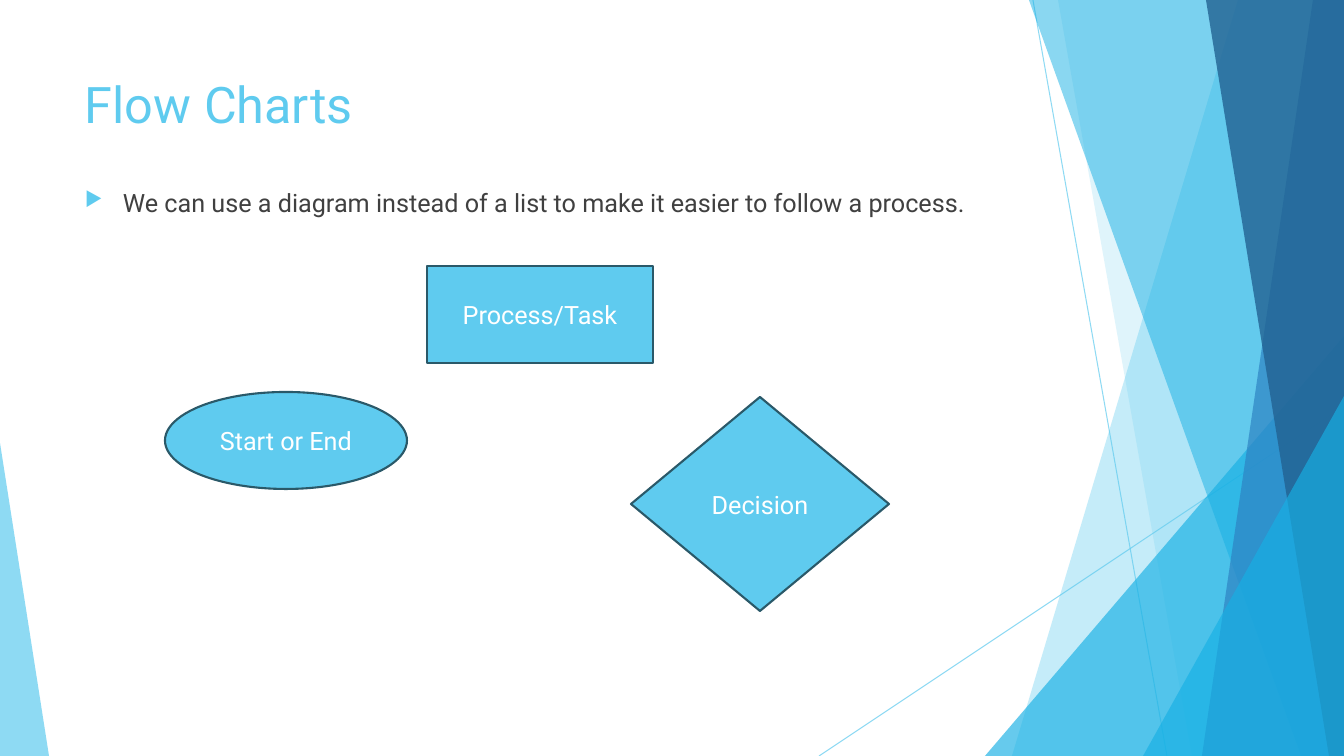
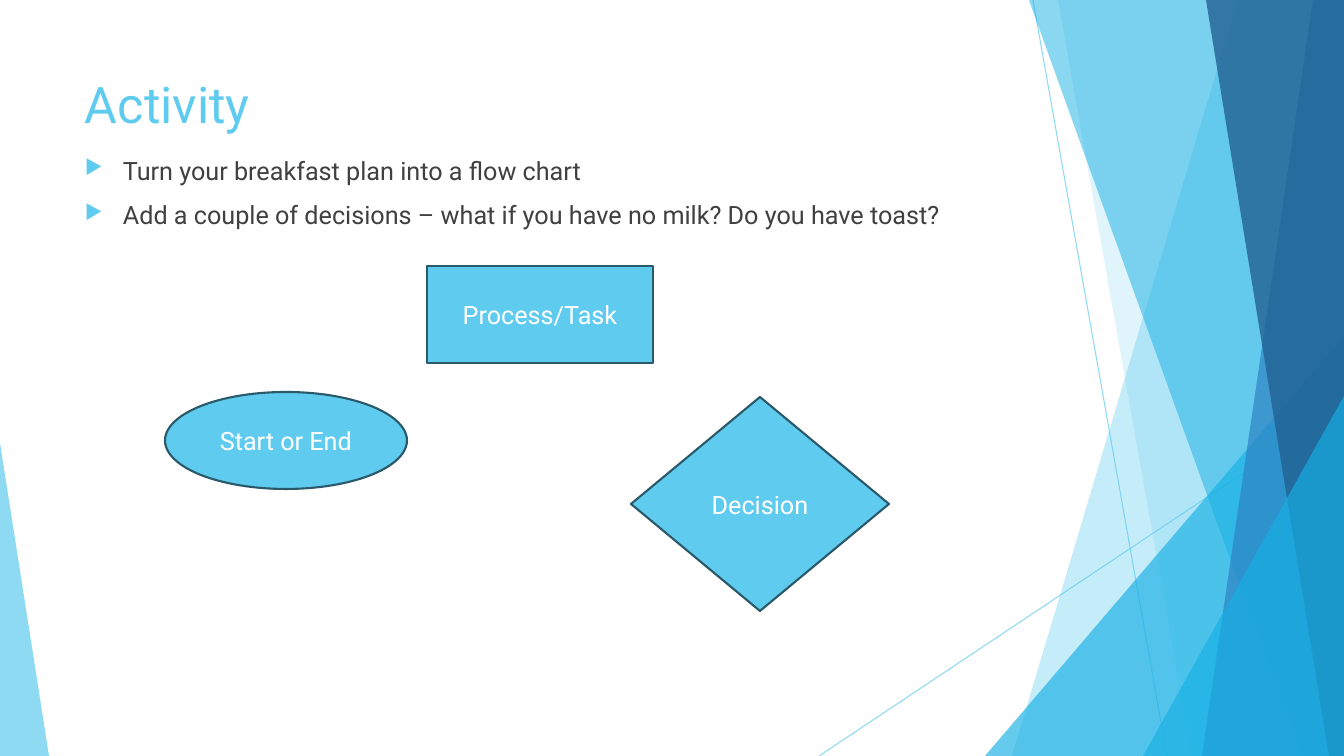
import dataclasses
import typing

import lxml.etree
import pptx
import pptx.dml.color
import pptx.enum.shapes
import pptx.enum.text
import pptx.oxml.ns
import pptx.util

SCALE = 914400 / 100.8
WIDTH, HEIGHT = 1344, 756
FONT = "Roboto"
COLORS = {
    "accent": "5FCBEF",
    "bright": "17B0E4",
    "blue": "2E83C3",
    "navy": "226292",
    "outline": "2A5969",
    "body": "404040",
    "white": "FFFFFF",
}
SHAPE = pptx.enum.shapes.MSO_SHAPE


@dataclasses.dataclass(frozen=True)
class Ray:
    x1: int
    y1: int
    x2: int
    y2: int


@dataclasses.dataclass(frozen=True)
class Band:
    top_x: int
    bottom_x: int
    color: str
    alpha: int


@dataclasses.dataclass(frozen=True)
class Wedge:
    left: int
    top: int
    width: int
    apex: int
    color: str
    alpha: int


@dataclasses.dataclass(frozen=True)
class Node:
    kind: typing.Any
    text: str
    left: int
    top: int
    width: int
    height: int


@dataclasses.dataclass(frozen=True)
class Page:
    title: str
    body_top: int
    bullets: tuple[str, ...]


DECOR = (
    Ray(1033, 0, 1167, HEIGHT),
    Ray(WIDTH, 406, 819, HEIGHT),
    Band(1238, 1012, "accent", 36),
    Band(1058, 1192, "accent", 20),
    Wedge(985, 336, 359, 1, "bright", 66),
    Band(1029, 1301, "bright", 50),
    Band(1313, 1202, "blue", 70),
    Band(1206, 1329, "navy", 80),
    Wedge(1143, 396, 201, 1, "bright", 66),
    Wedge(0, 443, 49, 0, "accent", 70),
)

NODES = (
    Node(SHAPE.RECTANGLE, "Process/Task", 427, 266, 226, 97),
    Node(SHAPE.DIAMOND, "Decision", 631, 397, 258, 214),
    Node(SHAPE.OVAL, "Start or End", 165, 392, 242, 97),
)

PAGES = (
    Page("Flow Charts", 182, (
        "We can use a diagram instead of a list to make it easier to follow a process.",
    )),
    Page("Activity", 150, (
        "Turn your breakfast plan into a flow chart",
        "Add a couple of decisions – what if you have no milk? Do you have toast?",
    )),
)


def px(n: int) -> int:
    return round(n * SCALE)


def rgb(name: str) -> pptx.dml.color.RGBColor:
    return pptx.dml.color.RGBColor.from_string(COLORS[name])


def add_xml(parent: typing.Any, tag: str, **attrs: str) -> typing.Any:
    return lxml.etree.SubElement(parent, pptx.oxml.ns.qn(tag), attrs)


def set_alpha(sp: typing.Any, percent: int) -> None:
    color = next(sp.element.spPr.iter(pptx.oxml.ns.qn("a:srgbClr")))
    add_xml(color, "a:alpha", val=str(percent * 1000))


def style_text(p: typing.Any, size: int, color: str) -> None:
    for r in p.runs:
        r.font.name = FONT
        r.font.size = pptx.util.Pt(size)
        r.font.color.rgb = rgb(color)


def fill_shape(sp: typing.Any, color: str) -> None:
    sp.shadow.inherit = False
    sp.fill.solid()
    sp.fill.fore_color.rgb = rgb(color)


def draw_ray(s: typing.Any, ray: Ray) -> None:
    sp = s.shapes.add_connector(
        pptx.enum.shapes.MSO_CONNECTOR.STRAIGHT,
        px(ray.x1), px(ray.y1), px(ray.x2), px(ray.y2))
    sp.line.color.rgb = rgb("accent")
    sp.line.width = pptx.util.Pt(0.75)
    set_alpha(sp, 70)
    add_xml(sp.element.spPr, "a:effectLst")


def draw_panel(s: typing.Any, panel: Band | Wedge) -> None:
    if isinstance(panel, Band):
        builder = s.shapes.build_freeform(panel.top_x, 0, scale=SCALE)
        builder.add_line_segments(
            [(WIDTH, 0), (WIDTH, HEIGHT), (panel.bottom_x, HEIGHT)], close=True)
        sp = builder.convert_to_shape()
    else:
        sp = s.shapes.add_shape(
            SHAPE.ISOSCELES_TRIANGLE, px(panel.left), px(panel.top),
            px(panel.width), px(HEIGHT - panel.top))
        sp.adjustments[0] = panel.apex
    fill_shape(sp, panel.color)
    set_alpha(sp, panel.alpha)
    sp.line.fill.background()


def draw_decor(s: typing.Any) -> None:
    for item in DECOR:
        if isinstance(item, Ray):
            draw_ray(s, item)
        else:
            draw_panel(s, item)


def add_text_frame(s: typing.Any, top: int, height: int) -> typing.Any:
    tf = s.shapes.add_textbox(px(75), px(top), px(948), px(height)).text_frame
    tf.word_wrap = True
    return tf


def draw_title(s: typing.Any, title: str) -> None:
    tf = add_text_frame(s, 68, 145)
    tf.text = title
    style_text(tf.paragraphs[0], 36, "accent")


def draw_bullets(s: typing.Any, top: int, bullets: tuple[str, ...]) -> None:
    tf = add_text_frame(s, top, 427)
    tf.text = "\n".join(bullets)
    for p in tf.paragraphs:
        p.space_before = pptx.util.Pt(10)
        style_text(p, 18, "body")
        props = p._p.get_or_add_pPr()
        props.set("marL", str(px(38)))
        props.set("indent", str(-px(38)))
        add_xml(add_xml(props, "a:buClr"), "a:srgbClr", val=COLORS["accent"])
        add_xml(props, "a:buSzPct", val="80000")
        add_xml(props, "a:buChar", char="▶")


def draw_node(s: typing.Any, node: Node) -> None:
    sp = s.shapes.add_shape(
        node.kind, px(node.left), px(node.top), px(node.width), px(node.height))
    fill_shape(sp, "accent")
    sp.line.color.rgb = rgb("outline")
    sp.line.width = pptx.util.Pt(1.5)
    tf = sp.text_frame
    tf.text = node.text
    tf.vertical_anchor = pptx.enum.text.MSO_ANCHOR.MIDDLE
    p = tf.paragraphs[0]
    p.alignment = pptx.enum.text.PP_ALIGN.CENTER
    style_text(p, 18, "white")


def main() -> None:
    prs = pptx.Presentation()
    prs.slide_width, prs.slide_height = px(WIDTH), px(HEIGHT)
    for page in PAGES:
        s = prs.slides.add_slide(prs.slide_layouts[6])
        draw_decor(s)
        draw_title(s, page.title)
        draw_bullets(s, page.body_top, page.bullets)
        for node in NODES:
            draw_node(s, node)
    prs.save("out.pptx")


if __name__ == "__main__":
    main()
